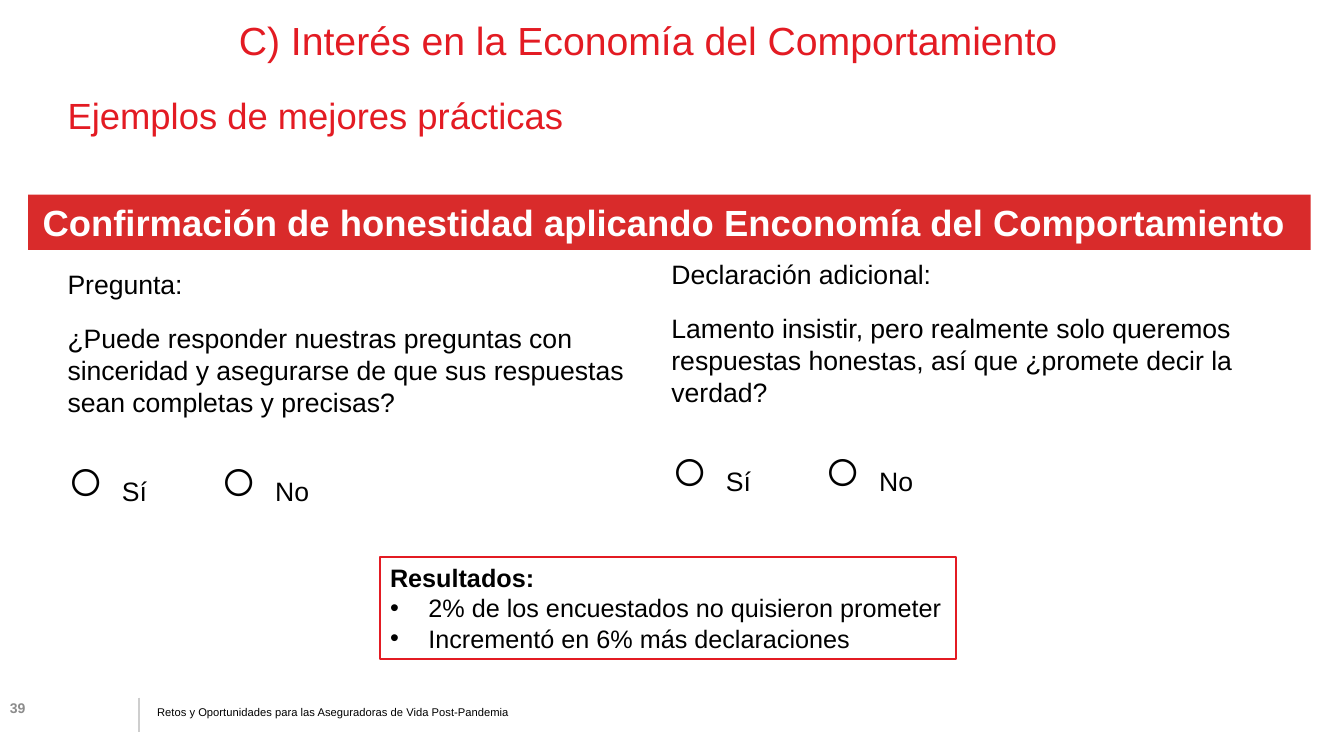
from dataclasses import dataclass

from lxml.etree import SubElement
from pptx import Presentation
from pptx.dml.color import RGBColor
from pptx.enum.shapes import MSO_CONNECTOR, MSO_SHAPE
from pptx.enum.text import MSO_ANCHOR, MSO_AUTO_SIZE, PP_ALIGN
from pptx.oxml.ns import qn
from pptx.util import Emu, Pt

PX = 9144  # 100 px to the inch


@dataclass(frozen=True)
class Theme:
    font: str = "Arial"
    red: str = "E31B23"
    banner: str = "D92B2B"
    white: str = "FFFFFF"
    black: str = "000000"
    gray: str = "8C8C8C"
    rule: str = "CECECE"
    title: int = 28
    heading: int = 26
    body: int = 19
    circle: int = 44
    results: int = 18
    number: int = 10
    footer: int = 8
    line: float = 1.5


def px(*lengths):
    return [Emu(length * PX) for length in lengths]


def add_text(para, text, *, font, size, color, bold=False):
    span = para.add_run()
    span.text = text
    span.font.name = font
    span.font.size = Pt(size)
    span.font.bold = bold
    span.font.color.rgb = RGBColor.from_string(color)


class SlideBuilder:
    def __init__(self, slide, theme):
        self.slide = slide
        self.theme = theme

    def frame(self, box, anchor=MSO_ANCHOR.TOP, left_inset=10, wrap=True):
        frame = box.text_frame
        frame.word_wrap = wrap
        frame.vertical_anchor = anchor
        frame.margin_left, frame.margin_right = px(left_inset, 10)
        frame.margin_top, frame.margin_bottom = px(5, 5)
        return frame

    def textbox(self, area, **layout):
        return self.frame(self.slide.shapes.add_textbox(*px(*area)), **layout)

    def rectangle(self, area, fill=None, line=None, **layout):
        box = self.slide.shapes.add_shape(MSO_SHAPE.RECTANGLE, *px(*area))
        box.shadow.inherit = False
        if fill:
            box.fill.solid()
            box.fill.fore_color.rgb = RGBColor.from_string(fill)
        else:
            box.fill.background()
        if line:
            box.line.color.rgb = RGBColor.from_string(line)
            box.line.width = Pt(self.theme.line)
        else:
            box.line.fill.background()
        return self.frame(box, **layout)

    def paragraph(self, frame, *spans, first=False, align=PP_ALIGN.LEFT,
                  before=0, spacing=None, bullet=False, tab=None):
        """Each span is a (text, size, color, bold) tuple."""
        para = frame.paragraphs[0] if first else frame.add_paragraph()
        properties = para._p.get_or_add_pPr()
        if bullet:
            properties.set("marL", str(38 * PX))
            properties.set("indent", str(-38 * PX))
            SubElement(properties, qn("a:buFont"), typeface=self.theme.font)
            SubElement(properties, qn("a:buChar"), char="•")
        if tab:
            stops = SubElement(properties, qn("a:tabLst"))
            SubElement(stops, qn("a:tab"), pos=str(tab * PX), algn="l")
        para.alignment = align
        if before and not first:
            para.space_before = Pt(before)
        if spacing:
            para.line_spacing = spacing
        for text, size, color, bold in spans:
            add_text(para, text, font=self.theme.font, size=size,
                     color=color, bold=bold)

    def rule(self, x, top, bottom):
        line = self.slide.shapes.add_connector(
            MSO_CONNECTOR.STRAIGHT, *px(x, top, x, bottom))
        line.line.color.rgb = RGBColor.from_string(self.theme.rule)
        line.line.width = Pt(self.theme.line)
        SubElement(line._element.spPr, qn("a:effectLst"))

    def question(self, left, top, label, text):
        theme = self.theme
        frame = self.textbox((left, top, 570, 256), left_inset=0)
        for index, line in enumerate((label, text)):
            self.paragraph(frame, (line, theme.body, theme.black, False),
                           first=index == 0, before=16)
        circle = ("○ ", theme.circle, theme.black, False)
        self.paragraph(frame,
                       circle, ("Sí\t", theme.body, theme.black, False),
                       circle, ("No", theme.body, theme.black, False),
                       before=16, tab=152)


def main():
    deck = Presentation()
    deck.slide_width, deck.slide_height = px(1333, 750)
    theme = Theme()
    page = SlideBuilder(deck.slides.add_slide(deck.slide_layouts[6]), theme)

    # Headings
    headings = (
        ("C) Interés en la Economía del Comportamiento",
         (133, 16, 1029, 52), theme.title, PP_ALIGN.CENTER),
        ("Ejemplos de mejores prácticas",
         (67, 89, 1221, 52), theme.heading, PP_ALIGN.LEFT),
    )
    for text, area, size, align in headings:
        frame = page.textbox(area, anchor=MSO_ANCHOR.BOTTOM, left_inset=0)
        page.paragraph(frame, (text, size, theme.red, False),
                       first=True, align=align, spacing=0.9)

    # Banner
    banner = page.rectangle((28, 193, 1272, 55), fill=theme.banner,
                            anchor=MSO_ANCHOR.MIDDLE, left_inset=0)
    page.paragraph(
        banner,
        ("Confirmación de honestidad aplicando Enconomía del Comportamiento",
         theme.heading, theme.white, True),
        first=True, align=PP_ALIGN.CENTER)

    # Questions
    page.question(67, 261, "Pregunta:",
                  "¿Puede responder nuestras preguntas con sinceridad y "
                  "asegurarse de que sus respuestas sean completas y precisas?")
    page.question(666, 251, "Declaración adicional:",
                  "Lamento insistir, pero realmente solo queremos respuestas "
                  "honestas, así que ¿promete decir la verdad?")

    # Results
    results = page.rectangle((377, 553, 571, 101), line=theme.red, wrap=False)
    results.auto_size = MSO_AUTO_SIZE.SHAPE_TO_FIT_TEXT
    page.paragraph(results, ("Resultados:", theme.results, theme.black, True),
                   first=True)
    for finding in ("2% de los encuestados no quisieron prometer",
                    "Incrementó en 6% más declaraciones"):
        page.paragraph(results, (finding, theme.results, theme.black, False),
                       bullet=True)

    # Footer
    page.rule(138, 692, 726)
    footer = page.textbox((146, 695, 740, 40))
    page.paragraph(
        footer,
        ("Retos y Oportunidades para las Aseguradoras de Vida Post-Pandemia",
         theme.footer, theme.black, False),
        first=True)
    number = page.textbox((0, 689, 59, 40))
    page.paragraph(number, ("39", theme.number, theme.gray, True), first=True)

    deck.save("out.pptx")


if __name__ == "__main__":
    main()
